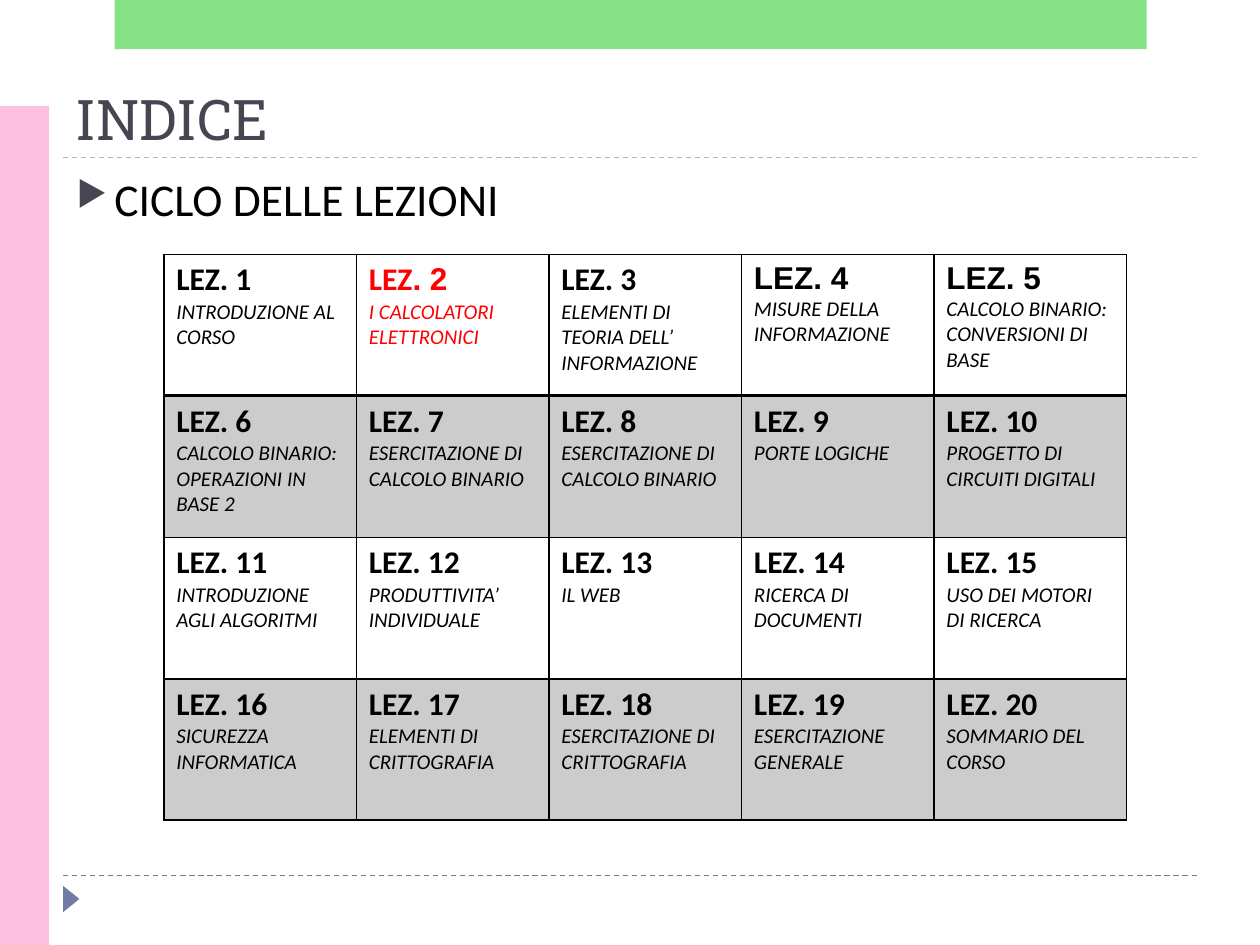
from dataclasses import dataclass

from lxml.etree import SubElement
from pptx import Presentation
from pptx.dml.color import RGBColor
from pptx.enum.dml import MSO_LINE
from pptx.enum.shapes import MSO_CONNECTOR, MSO_SHAPE
from pptx.enum.text import MSO_ANCHOR
from pptx.oxml.ns import qn
from pptx.util import Inches, Pt

BLACK = "000000"
RED = "FF0000"
SLATE = "464653"
INDIGO = "727CA3"
COLUMNS, ROWS = 5, 4
TABLE_WIDTH, TABLE_HEIGHT = 7.64, 4.49
HEADING = {"size": Pt(18), "bold": True, "name": "Calibri"}
TOPIC = {"size": Pt(12), "italic": True, "name": "Calibri"}


@dataclass
class Panel:
    kind: MSO_SHAPE
    left: float
    top: float
    width: float
    height: float
    color: str
    opacity: int = 100
    rotation: int = 0


@dataclass
class Rule:
    top: float
    color: str


@dataclass
class Lesson:
    topic: str
    color: str = BLACK
    word_font: str = "Calibri"
    number_font: str = "Calibri"


PANELS = [
    Panel(MSO_SHAPE.ISOSCELES_TRIANGLE, 0.46, 7.07, 0.21, 0.13, INDIGO, rotation=90),
    Panel(MSO_SHAPE.RECTANGLE, 0, 0.84, 0.39, 6.66, "FFC1E0"),
    Panel(MSO_SHAPE.RECTANGLE, 0.91, 0, 8.19, 0.39, "62D862", opacity=76),
]
RULES = [Rule(6.95, INDIGO), Rule(1.25, "9FB8CD")]
LESSONS = [
    Lesson("INTRODUZIONE AL CORSO"),
    Lesson("I CALCOLATORI ELETTRONICI", RED, number_font="Arial"),
    Lesson("ELEMENTI DI TEORIA DELL’ INFORMAZIONE"),
    Lesson("MISURE DELLA INFORMAZIONE", word_font="Arial", number_font="Arial"),
    Lesson("CALCOLO BINARIO: CONVERSIONI DI BASE", word_font="Arial", number_font="Arial"),
    Lesson("CALCOLO BINARIO: OPERAZIONI IN BASE 2"),
    Lesson("ESERCITAZIONE DI CALCOLO BINARIO"),
    Lesson("ESERCITAZIONE DI CALCOLO BINARIO"),
    Lesson("PORTE LOGICHE"),
    Lesson("PROGETTO DI CIRCUITI DIGITALI"),
    Lesson("INTRODUZIONE AGLI ALGORITMI"),
    Lesson("PRODUTTIVITA’ INDIVIDUALE"),
    Lesson("IL WEB"),
    Lesson("RICERCA DI DOCUMENTI"),
    Lesson("USO DEI MOTORI DI RICERCA"),
    Lesson("SICUREZZA INFORMATICA"),
    Lesson("ELEMENTI DI CRITTOGRAFIA"),
    Lesson("ESERCITAZIONE DI CRITTOGRAFIA"),
    Lesson("ESERCITAZIONE GENERALE"),
    Lesson("SOMMARIO DEL CORSO"),
]


def rgb(color: str) -> RGBColor:
    return RGBColor.from_string(color)


def paint(fill, properties, color: str, opacity: int) -> None:
    fill.solid()
    fill.fore_color.rgb = rgb(color)
    if opacity < 100:
        tone = properties.find(f"{qn('a:solidFill')}/{qn('a:srgbClr')}")
        SubElement(tone, qn("a:alpha"), val=str(opacity * 1000))


def add_run(paragraph, text: str, color: str, **formats) -> None:
    run = paragraph.add_run()
    run.text = text
    run.font.color.rgb = rgb(color)
    for attribute, value in formats.items():
        setattr(run.font, attribute, value)


def add_panel(slide, panel: Panel) -> None:
    shape = slide.shapes.add_shape(
        panel.kind, Inches(panel.left), Inches(panel.top), Inches(panel.width), Inches(panel.height)
    )
    shape.rotation = panel.rotation
    shape.shadow.inherit = False
    shape.line.fill.background()
    paint(shape.fill, shape._element.spPr, panel.color, panel.opacity)


def add_rule(slide, rule: Rule) -> None:
    connector = slide.shapes.add_connector(
        MSO_CONNECTOR.STRAIGHT, Inches(0.5), Inches(rule.top), Inches(9.5), Inches(rule.top)
    )
    connector.line.color.rgb = rgb(rule.color)
    connector.line.width = Pt(0.75)
    connector.line.dash_style = MSO_LINE.DASH
    SubElement(connector._element.spPr, qn("a:effectLst"))


def add_text_box(slide, left: float, top: float, height: float, anchor: MSO_ANCHOR):
    frame = slide.shapes.add_textbox(Inches(left), Inches(top), Inches(9), Inches(height)).text_frame
    frame.word_wrap = True
    frame.vertical_anchor = anchor
    return frame.paragraphs[0]


def add_bullet(paragraph) -> None:
    properties = paragraph._p.get_or_add_pPr()
    properties.set("marL", str(Inches(0.3)))
    properties.set("indent", str(Inches(-0.3)))
    SubElement(SubElement(properties, qn("a:buClr")), qn("a:srgbClr"), val=SLATE)
    SubElement(properties, qn("a:buSzPct"), val="76000")
    SubElement(properties, qn("a:buChar"), char="▶")


def add_borders(cell, row: int) -> None:
    widths = {"lnL": 1, "lnR": 1, "lnT": 2 if row == 1 else 1, "lnB": 2 if row == 0 else 1}
    properties = cell._tc.get_or_add_tcPr()
    for side, width in widths.items():
        border = SubElement(properties, qn(f"a:{side}"), w=str(Pt(width)))
        SubElement(SubElement(border, qn("a:solidFill")), qn("a:srgbClr"), val=BLACK)


def fill_cell(cell, row: int, number: int, lesson: Lesson) -> None:
    add_borders(cell, row)
    if row % 2:
        paint(cell.fill, cell._tc.tcPr, BLACK, 20)
    else:
        cell.fill.background()
    heading = cell.text_frame.paragraphs[0]
    if lesson.word_font == lesson.number_font:
        add_run(heading, f"LEZ. {number}", lesson.color, **HEADING | {"name": lesson.word_font})
    else:
        add_run(heading, "LEZ", lesson.color, **HEADING | {"name": lesson.word_font})
        add_run(heading, f". {number}", lesson.color, **HEADING | {"name": lesson.number_font})
    add_run(cell.text_frame.add_paragraph(), lesson.topic, lesson.color, **TOPIC)


def add_lessons(slide) -> None:
    table = slide.shapes.add_table(
        ROWS, COLUMNS, Inches(1.3), Inches(2.02), Inches(TABLE_WIDTH), Inches(TABLE_HEIGHT)
    ).table
    table.first_row = False
    table.horz_banding = False
    for index, lesson in enumerate(LESSONS):
        row, column = divmod(index, COLUMNS)
        fill_cell(table.cell(row, column), row, index + 1, lesson)


def main() -> None:
    """Build the lesson index slide and save it."""
    presentation = Presentation()
    presentation.slide_width = Inches(10)
    presentation.slide_height = Inches(7.5)
    slide = presentation.slides.add_slide(presentation.slide_layouts[6])
    for rule in RULES:
        add_rule(slide, rule)
    for panel in PANELS:
        add_panel(slide, panel)
    title = add_text_box(slide, 0.5, 0.55, 0.7, MSO_ANCHOR.BOTTOM)
    add_run(title, "INDICE", SLATE, size=Pt(32), name="Roboto Slab")
    subtitle = add_text_box(slide, 0.51, 1.31, 0.79, MSO_ANCHOR.TOP)
    add_bullet(subtitle)
    add_run(subtitle, "CICLO DELLE LEZIONI", BLACK, size=Pt(26), name="Calibri")
    add_lessons(slide)
    presentation.save("out.pptx")


if __name__ == "__main__":
    main()
